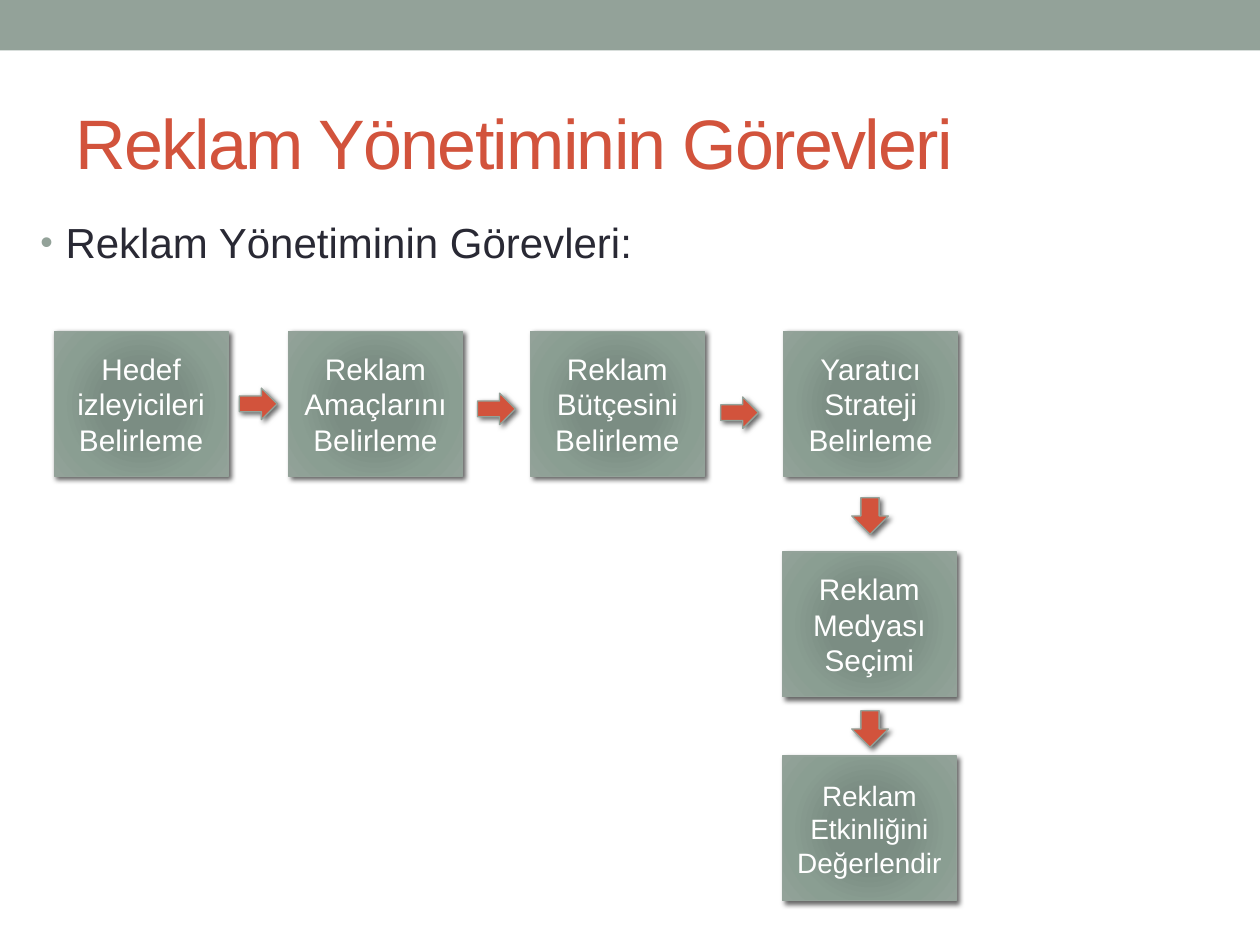
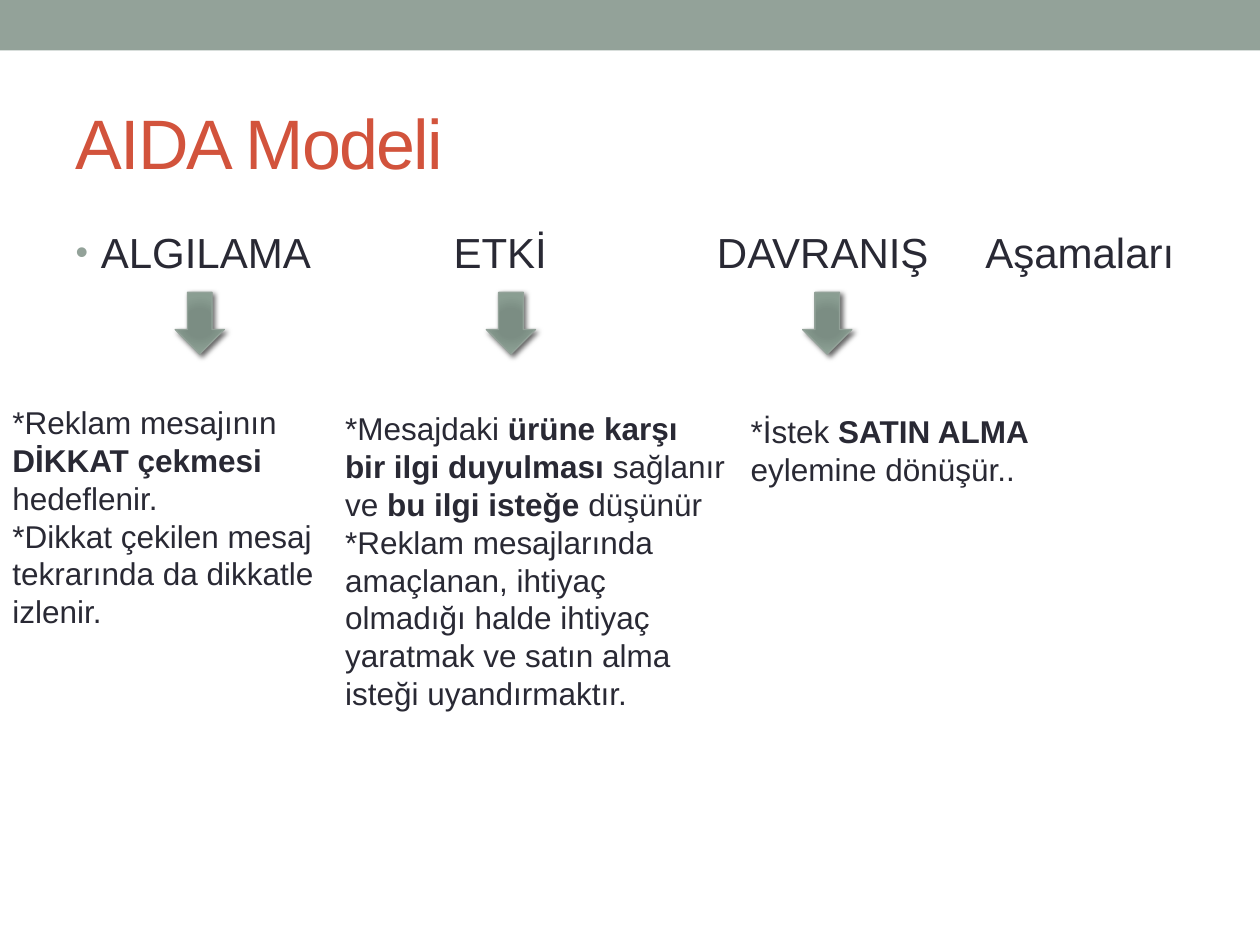
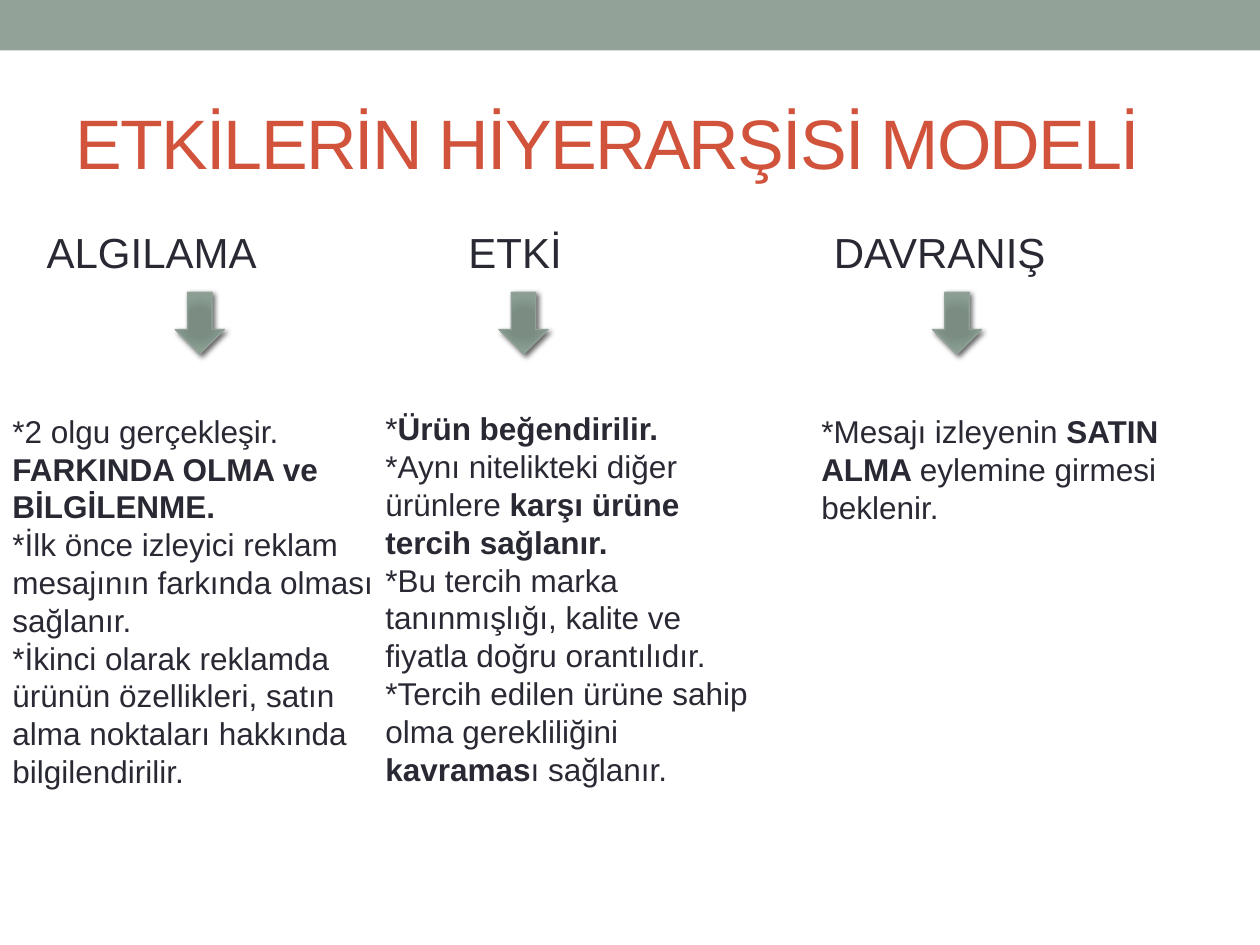
from dataclasses import dataclass
from typing import NamedTuple

from lxml import etree
from pptx import Presentation
from pptx.dml.color import RGBColor
from pptx.enum.shapes import MSO_SHAPE as Preset
from pptx.enum.text import MSO_ANCHOR as Anchor, MSO_AUTO_SIZE as AutoSize, PP_ALIGN as Align
from pptx.oxml import parse_xml
from pptx.oxml.ns import nsdecls, qn
from pptx.util import Inches, Pt

# Shared style
FONT = "Arial"
COLORS = {
    "sage": "93A299",
    "brick": "D2533C",
    "ink": "292934",
    "white": "FFFFFF",
    "shadow": "000000",
}
GRADIENT = ((0, "7B8E82"), (34, "7B8D83"), (70, "8A9E92"), (100, COLORS["sage"]))
HANGING = Inches(0.2)
STEP_WIDTH, STEP_HEIGHT = 1.38, 1.15
HEADING_TOP, HEADING_SIZE = 1.75, 24
STAGE_ARROW_TOP = 2.32


class Box(NamedTuple):
    left: float
    top: float
    width: float
    height: float


class Span(NamedTuple):
    text: str
    bold: bool = False


@dataclass
class Step:
    text: str
    left: float
    top: float
    size: int = 17


@dataclass
class Stage:
    arrow_left: float
    box: Box
    paragraphs: list[list[Span]]


@dataclass
class Heading:
    text: str
    box: Box
    bulleted: bool = True
    tabs: tuple[float, ...] = ()


def lengths(box: Box) -> list:
    return [Inches(value) for value in box]


def place(shape, box: Box) -> None:
    shape.left, shape.top, shape.width, shape.height = lengths(box)


def add_run(paragraph, text: str, size: int, color: str, bold: bool = False):
    run = paragraph.add_run()
    run.text = text
    font = run.font
    font.name, font.size, font.bold = FONT, Pt(size), bold
    font.color.rgb = RGBColor.from_string(COLORS[color])
    return run


def add_effects(shape) -> None:
    """Give a shape the soft shadow used across the slides."""
    shape.shadow.inherit = False
    effects = shape.element.spPr.find(qn("a:effectLst"))
    effects.append(parse_xml(
        f'<a:outerShdw {nsdecls("a")} blurRad="{Pt(3)}" dist="{Pt(2)}" dir="2700000"'
        f' algn="tl" rotWithShape="0"><a:srgbClr val="{COLORS["shadow"]}">'
        '<a:alpha val="60000"/></a:srgbClr></a:outerShdw>'))


def fill_gradient(shape) -> None:
    stops = "".join(f'<a:gs pos="{position * 1000}"><a:srgbClr val="{color}"/></a:gs>'
                    for position, color in GRADIENT)
    gradient = parse_xml(
        f'<a:gradFill {nsdecls("a")} rotWithShape="1"><a:gsLst>{stops}</a:gsLst>'
        '<a:path path="circle"><a:fillToRect l="100000" t="100000" r="100000" b="100000"/>'
        '</a:path></a:gradFill>')
    shape.element.spPr.find(qn("a:prstGeom")).addnext(gradient)


def add_block(slide, preset, box: Box, fill: str | None = None):
    """Add an outlined, shadowed shape: plain if a fill is named, else gradient."""
    shape = slide.shapes.add_shape(preset, *lengths(box))
    if fill:
        shape.fill.solid()
        shape.fill.fore_color.rgb = RGBColor.from_string(COLORS[fill])
    else:
        fill_gradient(shape)
    shape.line.color.rgb = RGBColor.from_string(COLORS["sage"])
    shape.line.width = Pt(0.75)
    add_effects(shape)
    return shape


def add_step(slide, step: Step) -> None:
    shape = add_block(slide, Preset.RECTANGLE,
                      Box(step.left, step.top, STEP_WIDTH, STEP_HEIGHT))
    shape.text_frame.vertical_anchor = Anchor.MIDDLE
    paragraph = shape.text_frame.paragraphs[0]
    paragraph.alignment = Align.CENTER
    add_run(paragraph, step.text, step.size, "white")


def add_text(slide, box: Box, paragraphs: list[list[Span]], size: int = 18) -> None:
    frame = slide.shapes.add_textbox(*lengths(box)).text_frame
    frame.word_wrap = True
    frame.auto_size = AutoSize.SHAPE_TO_FIT_TEXT
    for index, spans in enumerate(paragraphs):
        paragraph = frame.add_paragraph() if index else frame.paragraphs[0]
        for span in spans:
            add_run(paragraph, span.text, size, "ink", span.bold)


def add_stage(slide, stage: Stage) -> None:
    add_block(slide, Preset.DOWN_ARROW, Box(stage.arrow_left, STAGE_ARROW_TOP, 0.39, 0.49))
    add_text(slide, stage.box, stage.paragraphs)


def format_heading(paragraph, heading: Heading) -> None:
    properties = paragraph._p.get_or_add_pPr()
    indent = HANGING if heading.bulleted else 0
    properties.set("marL", str(indent))
    properties.set("indent", str(-indent))
    if heading.bulleted:
        color = etree.SubElement(properties, qn("a:buClr"))
        etree.SubElement(color, qn("a:srgbClr"), val=COLORS["sage"])
        etree.SubElement(properties, qn("a:buSzPct"), val="85000")
        etree.SubElement(properties, qn("a:buFont"), typeface=FONT)
        etree.SubElement(properties, qn("a:buChar"), char="•")
    else:
        etree.SubElement(properties, qn("a:buNone"))
    if heading.tabs:
        tab_list = etree.SubElement(properties, qn("a:tabLst"))
        for position in heading.tabs:
            etree.SubElement(tab_list, qn("a:tab"), pos=str(Inches(position)), algn="l")
    paragraph.space_before = Pt(0)


def add_slide(presentation, title: str, heading: Heading):
    slide = presentation.slides.add_slide(presentation.slide_layouts[1])
    title_shape, body = slide.placeholders
    place(title_shape, Box(0.5, 0.58, 9, 1.08))
    title_shape.text_frame.vertical_anchor = Anchor.MIDDLE
    paragraph = title_shape.text_frame.paragraphs[0]
    paragraph.alignment = Align.LEFT
    run = add_run(paragraph, title, 40, "brick")
    run.font._element.set("spc", "-100")

    place(body, heading.box)
    paragraph = body.text_frame.paragraphs[0]
    format_heading(paragraph, heading)
    add_run(paragraph, heading.text, HEADING_SIZE, "ink")
    return slide


def add_master_band(presentation, slide) -> None:
    """Draw the top band and move it behind everything on the slide master."""
    band = slide.shapes.add_shape(Preset.RECTANGLE, *lengths(Box(0, 0, 10, 0.4)))
    band.fill.solid()
    band.fill.fore_color.rgb = RGBColor.from_string(COLORS["sage"])
    band.line.fill.background()
    band.shadow.inherit = False
    presentation.slide_master.shapes.element.insert(2, band.element)


# Slide content
STEPS = [
    Step("Hedef izleyicileri Belirleme", 0.43, 2.63),
    Step("Reklam Amaçlarını Belirleme", 2.29, 2.63),
    Step("Reklam Bütçesini Belirleme", 4.21, 2.63),
    Step("Yaratıcı Strateji Belirleme", 6.22, 2.63),
    Step("Reklam Medyası Seçimi", 6.21, 4.38),
    Step("Reklam Etkinliğini Değerlendir", 6.21, 6, size=16),
]
RIGHT_ARROWS = [(1.9, 3.08), (3.79, 3.12), (5.72, 3.15)]
DOWN_ARROW_TOPS = [3.95, 5.64]

AIDA_STAGES = [
    Stage(1.39, Box(0, 3.15, 3.22, 1.92), [
        [Span("*Reklam mesajının "), Span("DİKKAT çekmesi ", True), Span("hedeflenir.")],
        [Span("*Dikkat çekilen mesaj tekrarında da dikkatle izlenir.")],
    ]),
    Stage(3.86, Box(2.64, 3.2, 3.22, 2.52), [
        [Span("*Mesajdaki "), Span("ürüne karşı bir ilgi duyulması ", True),
         Span("sağlanır ve "), Span("bu ilgi isteğe ", True), Span("düşünür")],
        [Span("*Reklam mesajlarında amaçlanan, ihtiyaç olmadığı halde ihtiyaç "
              "yaratmak ve satın alma isteği uyandırmaktır.")],
    ]),
    Stage(6.37, Box(5.86, 3.22, 2.9, 0.71), [
        [Span("*İstek "), Span("SATIN ALMA ", True), Span("eylemine dönüşür..")],
    ]),
]

# Headings beside the first one, with their left edges
HIERARCHY_HEADINGS = [("ETKİ", 3.62), ("DAVRANIŞ", 6.52)]
HIERARCHY_STAGES = [
    Stage(1.39, Box(0, 3.22, 3.22, 3.13), [
        [Span("*2 olgu gerçekleşir.")],
        [Span("FARKINDA OLMA ve", True)],
        [Span("BİLGİLENME.", True)],
        [Span("*İlk önce izleyici reklam mesajının farkında olması sağlanır.")],
        [Span("*İkinci olarak reklamda ürünün özellikleri, satın alma noktaları "
              "hakkında bilgilendirilir.")],
    ]),
    Stage(3.96, Box(2.96, 3.2, 3.22, 3.13), [
        [Span("*"), Span("Ürün beğendirilir.", True)],
        [Span("*Aynı nitelikteki diğer ürünlere "), Span("karşı ürüne tercih sağlanır.", True)],
        [Span("*Bu tercih marka tanınmışlığı, kalite ve fiyatla doğru orantılıdır.")],
        [Span("*Tercih edilen ürüne sahip olma gerekliliğini "),
         Span("kavramas", True), Span("ı sağlanır.")],
    ]),
    Stage(7.4, Box(6.42, 3.22, 2.9, 1.01), [
        [Span("*Mesajı izleyenin "), Span("SATIN ALMA ", True),
         Span("eylemine girmesi beklenir.")],
    ]),
]


def main() -> None:
    presentation = Presentation()
    presentation.slide_width, presentation.slide_height = Inches(10), Inches(7.5)

    # Tasks of advertising management
    slide = add_slide(presentation, "Reklam Yönetiminin Görevleri",
                      Heading("Reklam Yönetiminin Görevleri:", Box(0.22, 1.67, 9.28, 5.42)))
    add_master_band(presentation, slide)
    for step in STEPS:
        add_step(slide, step)
    for left, top in RIGHT_ARROWS:
        add_block(slide, Preset.RIGHT_ARROW, Box(left, top, 0.3, 0.25), "brick")
    for top in DOWN_ARROW_TOPS:
        add_block(slide, Preset.DOWN_ARROW, Box(6.76, top, 0.29, 0.29), "brick")

    # AIDA model
    slide = add_slide(presentation, "AIDA Modeli",
                      Heading("ALGILAMA\tETKİ\tDAVRANIŞ\tAşamaları",
                              Box(0.5, HEADING_TOP, 9, 5.33), tabs=(3, 5.09, 7.22)))
    for stage in AIDA_STAGES:
        add_stage(slide, stage)

    # Hierarchy of effects model
    slide = add_slide(presentation, "ETKİLERİN HİYERARŞİSİ MODELİ",
                      Heading("ALGILAMA", Box(0.27, HEADING_TOP, 9.23, 5.33), bulleted=False))
    for text, left in HIERARCHY_HEADINGS:
        add_text(slide, Box(left, HEADING_TOP, 2.5, 0.5), [[Span(text)]], HEADING_SIZE)
    for stage in HIERARCHY_STAGES:
        add_stage(slide, stage)

    presentation.save("out.pptx")


if __name__ == "__main__":
    main()
